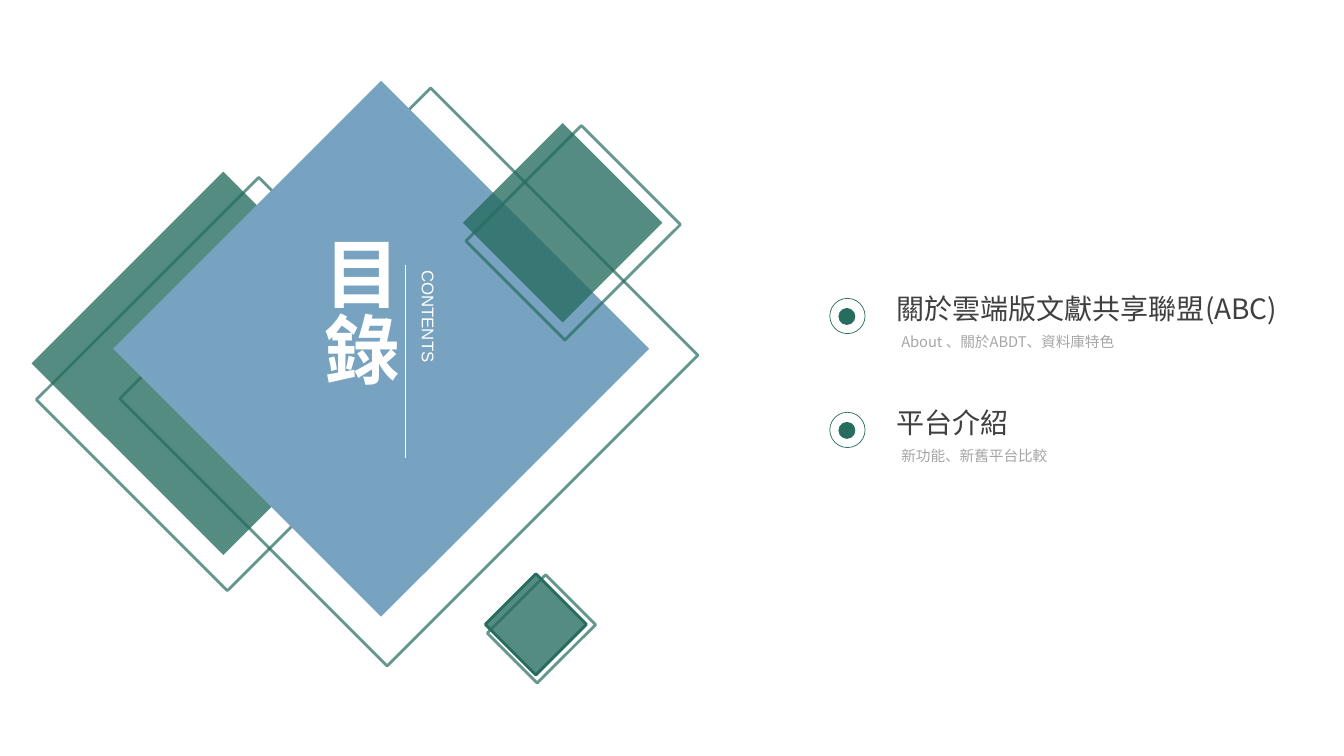
from lxml.etree import SubElement
from pptx import Presentation
from pptx.dml.color import RGBColor
from pptx.enum.shapes import MSO_CONNECTOR, MSO_SHAPE
from pptx.enum.text import MSO_AUTO_SIZE, PP_ALIGN
from pptx.oxml.ns import qn
from pptx.util import Inches, Pt

GREEN = "266C5F"
BLUE = "77A3C1"
WHITE = "FFFFFF"
CJK = "Noto Sans CJK SC"


def paint(fill, color, opacity=100):
    fill.solid()
    fill.fore_color.rgb = RGBColor.from_string(color)
    if opacity < 100:
        for tint in fill._xPr.iter(qn("a:srgbClr")):
            SubElement(tint, qn("a:alpha"), val=str(opacity * 1000))


def add_figure(page, kind, box, fill=None, line=None, width=0.5,
               fill_opacity=100, line_opacity=100, rotation=0):
    figure = page.shapes.add_shape(kind, *map(Inches, box))
    figure.shadow.inherit = False
    figure.rotation = rotation
    if fill:
        paint(figure.fill, fill, fill_opacity)
    else:
        figure.fill.background()
    if line:
        figure.line.width = Pt(width)
        paint(figure.line.fill, line, line_opacity)
    else:
        figure.line.fill.background()


def add_text(page, box, text, size, color, font=CJK, bold=False,
             align=PP_ALIGN.LEFT, vertical=False):
    label = page.shapes.add_textbox(*map(Inches, box))
    frame = label.text_frame
    frame.word_wrap = True
    frame.auto_size = MSO_AUTO_SIZE.SHAPE_TO_FIT_TEXT
    frame.margin_left = frame.margin_right = 0
    frame.margin_top = frame.margin_bottom = 0
    if vertical:
        label.element.txBody.bodyPr.set("vert", "eaVert")
    para = frame.paragraphs[0]
    para.text = text
    para.alignment = align
    para.font.size = Pt(size)
    para.font.bold = bold
    para.font.color.rgb = RGBColor.from_string(color)
    para.font.name = font
    properties = para._p.pPr.find(qn("a:defRPr"))
    SubElement(properties, qn("a:ea"), typeface=font)


def add_diamond_pair(page, outline, square, fill=GREEN, opacity=78, edge=None):
    add_figure(page, MSO_SHAPE.RECTANGLE, outline, line=GREEN, width=2,
               line_opacity=70, rotation=45)
    left, top, side = square
    add_figure(page, MSO_SHAPE.RECTANGLE, (left, top, side, side), fill=fill,
               fill_opacity=opacity, line=edge, width=2, rotation=45)


def add_diamonds(page):
    add_diamond_pair(page, (1.07, 2.25, 2.68, 3.12), (0.87, 2.26, 2.69))
    add_diamond_pair(page, (2.18, 1.56, 3.75, 4.36), (1.9, 1.58, 3.76), BLUE, 100)
    add_diamond_pair(page, (4.99, 1.5, 1.39, 1.62), (4.88, 1.51, 1.4))
    add_diamond_pair(page, (5.02, 5.83, 0.7, 0.82), (4.96, 5.84, 0.71), edge=GREEN)


def add_title(page, left, top):
    add_text(page, (left, top, 0.91, 2.39), "目錄", 54, WHITE, bold=True,
             align=PP_ALIGN.CENTER, vertical=True)
    add_text(page, (left + 1.04, top + 0.34, 0.2, 1.91), "CONTENTS", 12, WHITE,
             font="Arial", align=PP_ALIGN.JUSTIFY, vertical=True)
    x = Inches(left + 0.91)
    divider = page.shapes.add_connector(
        MSO_CONNECTOR.STRAIGHT, x, Inches(top + 0.29), x, Inches(top + 2.2))
    divider.line.width = Pt(0.5)
    paint(divider.line.fill, WHITE)
    SubElement(divider.element.spPr, qn("a:effectLst"))


def add_entry(page, left, top, heading, detail):
    add_text(page, (left + 0.66, top, 4.13, 0.34), heading, 20, "404040")
    add_text(page, (left + 0.71, top + 0.41, 4.13, 0.18), detail, 10.5, "A6A6A6")
    add_figure(page, MSO_SHAPE.OVAL, (left, top + 0.07, 0.35, 0.35), line=GREEN)
    add_figure(page, MSO_SHAPE.OVAL, (left + 0.09, top + 0.17, 0.16, 0.16),
               fill=GREEN, line=GREEN)


def main():
    deck = Presentation()
    deck.slide_width = Inches(13.33)
    deck.slide_height = Inches(7.5)
    page = deck.slides.add_slide(deck.slide_layouts[6])
    add_diamonds(page)
    add_title(page, 3.11, 2.34)
    entries = [
        ("關於雲端版文獻共享聯盟(ABC)", "About 、關於ABDT、資料庫特色"),
        ("平台介紹", "新功能、新舊平台比較"),
    ]
    for index, (heading, detail) in enumerate(entries):
        add_entry(page, 8.23, 2.89 + 1.13 * index, heading, detail)
    deck.save("out.pptx")


if __name__ == "__main__":
    main()
